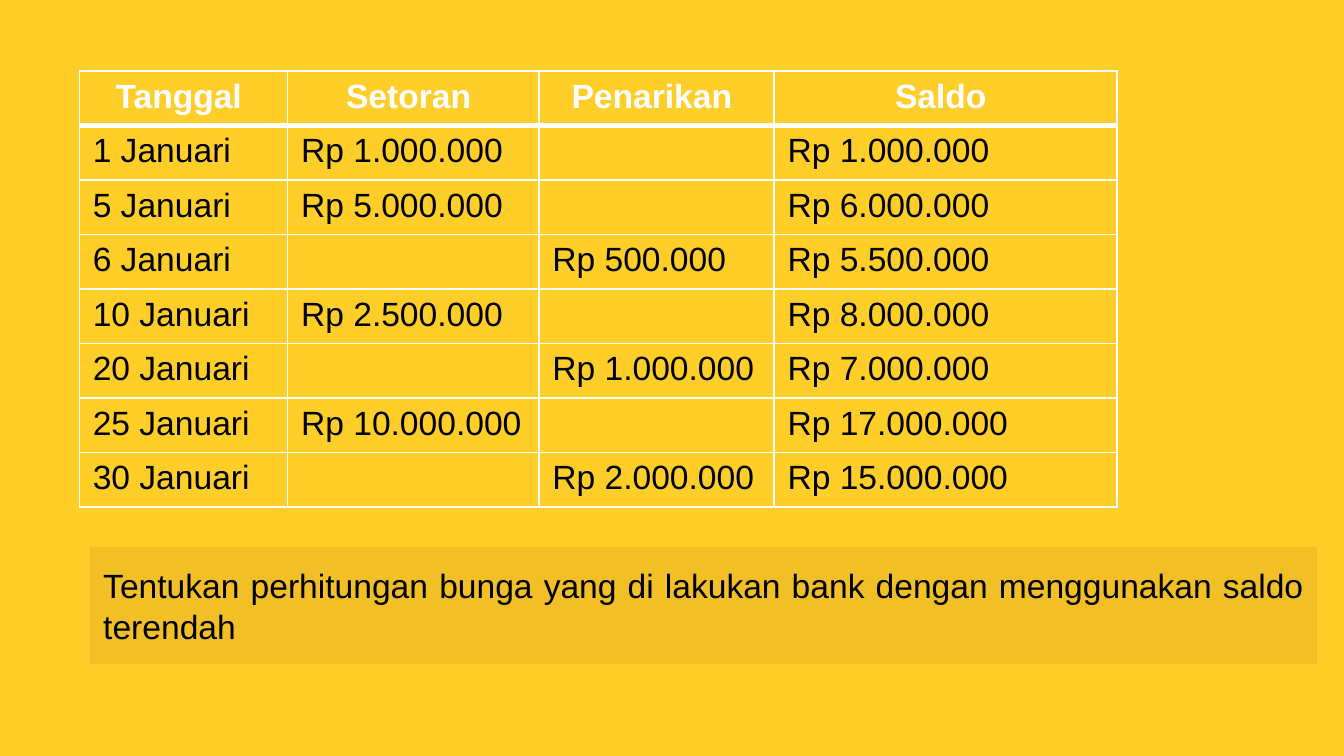
import dataclasses

import lxml.etree
import pptx
import pptx.dml.color
import pptx.enum.shapes
import pptx.enum.text
import pptx.oxml.ns
import pptx.presentation
import pptx.slide
import pptx.table
import pptx.text.text
import pptx.util

Pt = pptx.util.Pt
RGBColor = pptx.dml.color.RGBColor
Align = pptx.enum.text.PP_ALIGN
qn = pptx.oxml.ns.qn

YELLOW = RGBColor(0xFF, 0xCE, 0x29)
AMBER = RGBColor(0xF2, 0xBF, 0x27)
WHITE = RGBColor(0xFF, 0xFF, 0xFF)
BLACK = RGBColor(0x00, 0x00, 0x00)

FONT = "Arial"
TEXT_SIZE = Pt(18)
THIN = Pt(1)
THICK = Pt(3)
BLANK_LAYOUT = 6

HEADINGS = ("Tanggal ", "Setoran ", "Penarikan ", "Saldo ")
COLUMN_WIDTHS = (Pt(111.6), Pt(134.64), Pt(126), Pt(183.6))
ROW_HEIGHT = Pt(29.16)
QUESTION = (
    "Tentukan perhitungan bunga yang di lakukan bank "
    "dengan menggunakan saldo terendah "
)


@dataclasses.dataclass(frozen=True)
class Transaction:
    date: str
    deposit: str
    withdrawal: str
    balance: str


TRANSACTIONS = (
    Transaction("1 Januari", "Rp 1.000.000", "", "Rp 1.000.000"),
    Transaction("5 Januari", "Rp 5.000.000", "", "Rp 6.000.000"),
    Transaction("6 Januari", "", "Rp 500.000", "Rp 5.500.000"),
    Transaction("10 Januari", "Rp 2.500.000", "", "Rp 8.000.000"),
    Transaction("20 Januari", "", "Rp 1.000.000", "Rp 7.000.000"),
    Transaction("25 Januari", "Rp 10.000.000", "", "Rp 17.000.000"),
    Transaction("30 Januari", "", "Rp 2.000.000", "Rp 15.000.000"),
)


def write_text(
    frame: pptx.text.text.TextFrame,
    text: str,
    color: RGBColor,
    align: Align,
    bold: bool = False,
) -> None:
    paragraph = frame.paragraphs[0]
    paragraph.alignment = align
    run = paragraph.add_run()
    run.text = text
    run.font.name = FONT
    run.font.size = TEXT_SIZE
    run.font.bold = bold
    run.font.color.rgb = color


def draw_borders(cell: pptx.table._Cell, top: int, bottom: int) -> None:
    """Add white borders; call before filling, as the schema puts lines first."""
    properties = cell._tc.get_or_add_tcPr()
    sides = {"a:lnL": THIN, "a:lnR": THIN, "a:lnT": top, "a:lnB": bottom}
    for side, width in sides.items():
        line = lxml.etree.SubElement(properties, qn(side), w=str(int(width)))
        fill = lxml.etree.SubElement(line, qn("a:solidFill"))
        lxml.etree.SubElement(fill, qn("a:srgbClr"), val=str(WHITE))


def add_ledger(slide: pptx.slide.Slide) -> None:
    rows = [HEADINGS, *(dataclasses.astuple(entry) for entry in TRANSACTIONS)]
    ledger = slide.shapes.add_table(
        len(rows), len(HEADINGS), Pt(42.48), Pt(38.16),
        sum(COLUMN_WIDTHS), ROW_HEIGHT * len(rows),
    ).table
    for column, width in zip(ledger.columns, COLUMN_WIDTHS):
        column.width = width
    for row_index, row in enumerate(rows):
        ledger.rows[row_index].height = ROW_HEIGHT
        is_header = row_index == 0
        for column_index, text in enumerate(row):
            cell = ledger.cell(row_index, column_index)
            draw_borders(
                cell,
                top=THICK if row_index == 1 else THIN,
                bottom=THICK if is_header else THIN,
            )
            cell.fill.solid()
            cell.fill.fore_color.rgb = YELLOW
            if text:
                write_text(
                    cell.text_frame, text,
                    WHITE if is_header else BLACK,
                    Align.CENTER if is_header else Align.LEFT,
                    bold=is_header,
                )


def add_question(slide: pptx.slide.Slide) -> None:
    question = slide.shapes.add_shape(
        pptx.enum.shapes.MSO_SHAPE.RECTANGLE,
        Pt(48.24), Pt(293.04), Pt(657.36), Pt(62.64),
    )
    question.shadow.inherit = False
    question.fill.solid()
    question.fill.fore_color.rgb = AMBER
    question.line.fill.background()
    question.text_frame.word_wrap = True
    question.text_frame.vertical_anchor = pptx.enum.text.MSO_ANCHOR.MIDDLE
    write_text(question.text_frame, QUESTION, BLACK, Align.JUSTIFY)


def main() -> None:
    deck = pptx.Presentation()
    deck.slide_width = Pt(720)
    deck.slide_height = Pt(405)
    slide = deck.slides.add_slide(deck.slide_layouts[BLANK_LAYOUT])
    slide.background.fill.solid()
    slide.background.fill.fore_color.rgb = YELLOW
    add_ledger(slide)
    add_question(slide)
    deck.save("out.pptx")


if __name__ == "__main__":
    main()
